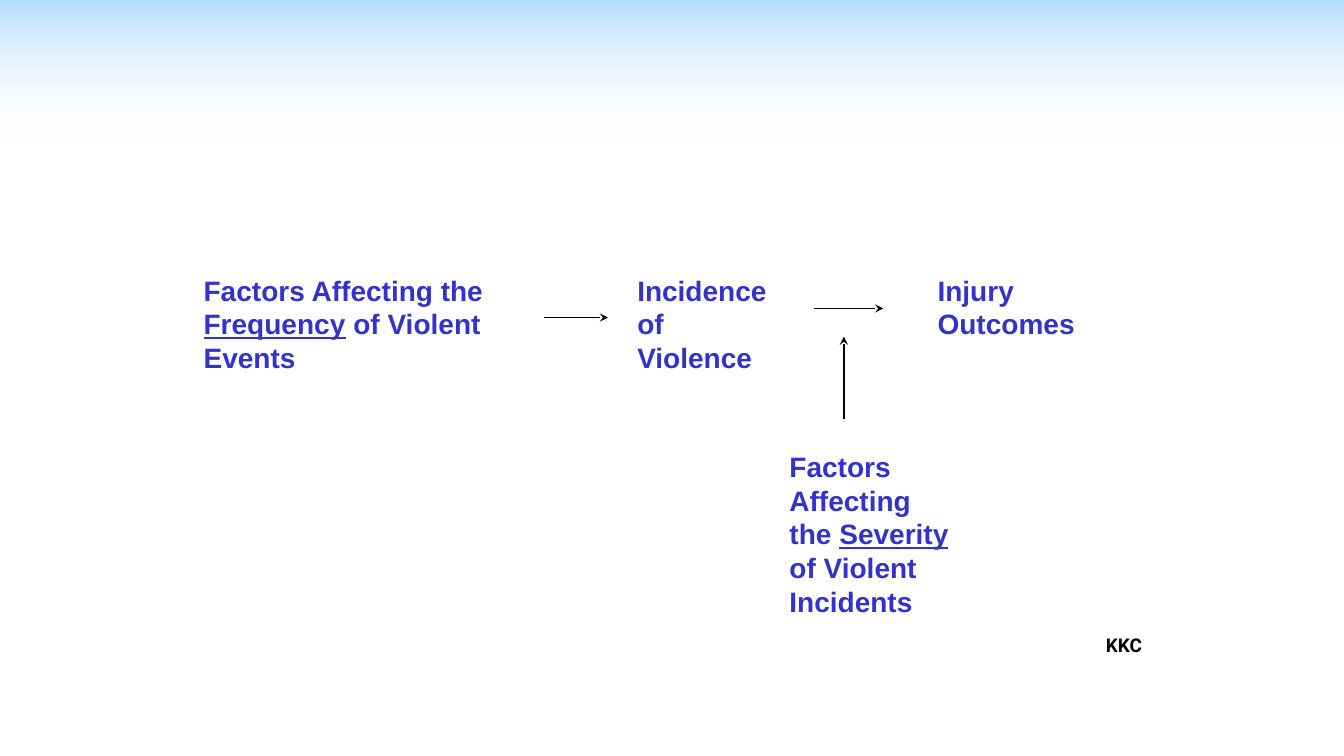
from dataclasses import dataclass

import pptx
import pptx.dml.color
import pptx.enum.dml
import pptx.enum.shapes
import pptx.enum.text
import pptx.oxml
import pptx.oxml.ns
import pptx.util
from lxml import etree


@dataclass(frozen=True)
class Theme:
    label: str = "3333CC"
    ink: str = "000000"
    sky: str = "B4DEFF"
    paper: str = "FFFFFF"
    label_font: str = "Arial"
    credit_font: str = "Roboto"
    label_size: float = 20
    label_leading: float = 24
    credit_size: float = 13.5
    line_width: float = 1


# Positions and sizes are percentages of the slide's width and height.
@dataclass(frozen=True)
class Label:
    x: float
    y: float
    w: float
    h: float
    lines: tuple[str, ...]  # underscores enclose underlined words


@dataclass(frozen=True)
class Arrow:
    x1: float
    y1: float
    x2: float
    y2: float


THEME = Theme()
WIDTH, HEIGHT = pptx.util.Inches(13.33), pptx.util.Inches(7.5)
CHAIN_TOP = 35.6

LABELS = (
    Label(14.63, CHAIN_TOP, 21.98, 14.4,
          ("Factors Affecting the", "_Frequency_ of Violent", "Events")),
    Label(46.89, CHAIN_TOP, 10.95, 14.4, ("Incidence", "of Violence")),
    Label(69.24, CHAIN_TOP, 11.85, 10, ("Injury", "Outcomes")),
    Label(58.21, 58.93, 14.93, 23.47,
          ("Factors Affecting", "the _Severity_ of Violent Incidents")),
)
CREDIT = Label(81.55, 83.2, 13.35, 4.4, ("KKC",))
ARROWS = (
    Arrow(62.79, 55.47, 62.79, 44.53),  # severity factors, upward
    Arrow(60.54, 40.8, 65.72, 40.8),    # incidence to injury
    Arrow(40.51, 42, 45.24, 42),        # frequency factors to incidence
)


def across(share: float) -> int:
    return round(WIDTH * share / 100)


def down(share: float) -> int:
    return round(HEIGHT * share / 100)


def rgb(value: str) -> pptx.dml.color.RGBColor:
    return pptx.dml.color.RGBColor.from_string(value)


def add_sky(s: pptx.slide.Slide) -> None:
    sp = s.shapes.add_shape(pptx.enum.shapes.MSO_SHAPE.RECTANGLE,
                            0, 0, WIDTH, down(19.07))
    sp.shadow.inherit = False
    sp.line.fill.background()
    sp.fill.gradient()
    sp.fill.gradient_angle = 270
    for stop, position, color in zip(sp.fill.gradient_stops, (0, 1),
                                     (THEME.sky, THEME.paper)):
        stop.position = position
        stop.color.rgb = rgb(color)
    # The lower end fades to full transparency
    clear = sp.fill._xPr.findall(".//" + pptx.oxml.ns.qn("a:srgbClr"))[-1]
    etree.SubElement(clear, pptx.oxml.ns.qn("a:alpha"), val="0")


def add_label(s: pptx.slide.Slide, label: Label, font: str, size: float,
              color: str) -> pptx.text.text.TextFrame:
    sp = s.shapes.add_textbox(across(label.x), down(label.y),
                              across(label.w), down(label.h))
    tf = sp.text_frame
    tf.word_wrap = True
    tf.auto_size = pptx.enum.text.MSO_AUTO_SIZE.SHAPE_TO_FIT_TEXT
    for i, line in enumerate(label.lines):
        p = tf.add_paragraph() if i else tf.paragraphs[0]
        for j, part in enumerate(line.split("_")):
            if not part:
                continue
            r = p.add_run()
            r.text = part
            r.font.name = font
            r.font.size = pptx.util.Pt(size)
            r.font.bold = True
            r.font.color.rgb = rgb(color)
            if j % 2:
                r.font.underline = True
    return tf


def add_factor(s: pptx.slide.Slide, label: Label) -> None:
    tf = add_label(s, label, THEME.label_font, THEME.label_size, THEME.label)
    tf.margin_left = tf.margin_right = pptx.util.Inches(0.07)
    tf.margin_top = tf.margin_bottom = pptx.util.Inches(0.04)
    for p in tf.paragraphs:
        p.line_spacing = pptx.util.Pt(THEME.label_leading)


def add_arrow(s: pptx.slide.Slide, arrow: Arrow) -> None:
    cn = s.shapes.add_connector(pptx.enum.shapes.MSO_CONNECTOR.STRAIGHT,
                                across(arrow.x1), down(arrow.y1),
                                across(arrow.x2), down(arrow.y2))
    cn.line.color.rgb = rgb(THEME.ink)
    cn.line.width = pptx.util.Pt(THEME.line_width)
    etree.SubElement(cn.line._get_or_add_ln(),
                     pptx.oxml.ns.qn("a:tailEnd"), type="stealth")
    etree.SubElement(cn._element.spPr, pptx.oxml.ns.qn("a:effectLst"))


def main() -> None:
    prs = pptx.Presentation()
    prs.slide_width, prs.slide_height = WIDTH, HEIGHT
    s = prs.slides.add_slide(prs.slide_layouts[6])

    # Background
    s.background.fill.solid()
    s.background.fill.fore_color.rgb = rgb(THEME.paper)
    add_sky(s)

    # Causal chain
    for label in LABELS:
        add_factor(s, label)
    for arrow in ARROWS:
        add_arrow(s, arrow)

    # Credit
    add_label(s, CREDIT, THEME.credit_font, THEME.credit_size, THEME.ink)

    prs.save("out.pptx")


if __name__ == "__main__":
    main()
